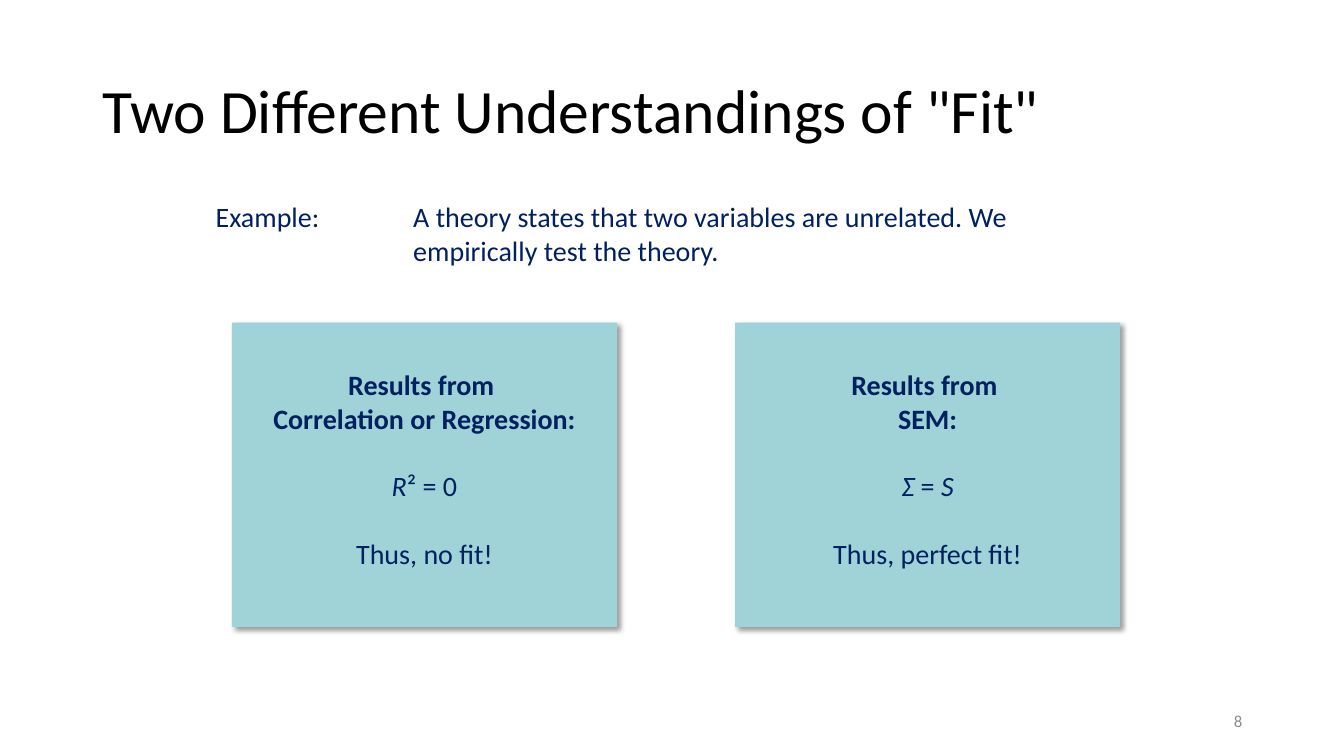
"""Build the slide contrasting two understandings of fit."""
from dataclasses import dataclass

from lxml import etree
from pptx import Presentation
from pptx.dml.color import RGBColor
from pptx.enum.shapes import MSO_SHAPE
from pptx.enum.text import MSO_ANCHOR, PP_ALIGN
from pptx.oxml.ns import qn
from pptx.util import Inches, Pt

RECTANGLE = MSO_SHAPE.RECTANGLE
TOP, MIDDLE = MSO_ANCHOR.TOP, MSO_ANCHOR.MIDDLE
LEFT, CENTER, RIGHT = PP_ALIGN.LEFT, PP_ALIGN.CENTER, PP_ALIGN.RIGHT


@dataclass(frozen=True)
class Theme:
    """Font, colours and type sizes of the slide."""
    font: str = "Calibri"
    title: str = "000000"
    body: str = "002060"
    card: str = "9FD3D7"
    number: str = "8C8C8C"
    shadow: str = "000000"
    title_size: int = 44
    body_size: int = 20
    number_size: int = 12


THEME = Theme()


def add_span(para, text, size=THEME.body_size, color=THEME.body, bold=False, italic=False):
    """Add one formatted run to a paragraph."""
    span = para.add_run()
    span.text = text
    span.font.name = THEME.font
    span.font.size = Pt(size)
    span.font.color.rgb = RGBColor.from_string(color)
    span.font.bold = bold
    span.font.italic = italic


def add_text(page, left, top, width, height, anchor=TOP, align=LEFT):
    """Add a wrapping text box and return its first paragraph."""
    box = page.shapes.add_textbox(Inches(left), Inches(top), Inches(width), Inches(height))
    box.text_frame.word_wrap = True
    box.text_frame.vertical_anchor = anchor
    para = box.text_frame.paragraphs[0]
    para.alignment = align
    return para


def set_hanging_indent(para, indent):
    """Hang the lines of a paragraph from a tab stop."""
    properties = para._p.get_or_add_pPr()
    properties.set("marL", str(Inches(indent)))
    properties.set("indent", str(-Inches(indent)))
    tabs = etree.SubElement(properties, qn("a:tabLst"))
    etree.SubElement(tabs, qn("a:tab"), pos=str(Inches(indent)), algn="l")


def add_shadow(shape):
    """Give a shape a soft shadow to the lower right."""
    shape.shadow.inherit = False
    effects = shape._element.spPr.find(qn("a:effectLst"))
    shadow = etree.SubElement(effects, qn("a:outerShdw"), blurRad=str(Pt(4)),
                              dist=str(Pt(3)), dir=str(45 * 60000), algn="tl", rotWithShape="0")
    color = etree.SubElement(shadow, qn("a:srgbClr"), val=THEME.shadow)
    etree.SubElement(color, qn("a:alpha"), val="40000")


def add_card(page, left, method, equation, verdict):
    """Add a result card with heading, equation and verdict."""
    card = page.shapes.add_shape(RECTANGLE, Inches(left), Inches(3.2), Inches(3.82), Inches(3.02))
    card.fill.solid()
    card.fill.fore_color.rgb = RGBColor.from_string(THEME.card)
    card.line.fill.background()
    add_shadow(card)
    frame = card.text_frame
    frame.word_wrap = True
    frame.vertical_anchor = TOP
    frame.margin_top = Inches(0.45)
    heading, formula, conclusion = frame.paragraphs[0], frame.add_paragraph(), frame.add_paragraph()
    for para in (heading, formula, conclusion):
        para.alignment = CENTER
    for para in (formula, conclusion):
        para.space_before = Pt(24)
    add_span(heading, "Results from ", bold=True)
    heading.add_line_break()
    add_span(heading, method, bold=True)
    for text, italic in equation:
        add_span(formula, text, italic=italic)
    add_span(conclusion, verdict)


def main():
    """Build and save the deck."""
    deck = Presentation()
    deck.slide_width, deck.slide_height = Inches(13.33), Inches(7.5)
    page = deck.slides.add_slide(deck.slide_layouts[6])

    title = add_text(page, 0.92, 0.4, 11.5, 1.45, MIDDLE)
    title.line_spacing = 0.9
    add_span(title, 'Two Different Understandings of "Fit"', THEME.title_size, THEME.title)

    example = add_text(page, 2.04, 1.93, 9.25, 0.81)
    set_hanging_indent(example, 1.96)
    add_span(example, "Example:\tA theory states that two variables are unrelated. "
                      "We empirically test the theory.")

    add_card(page, 2.3, "Correlation or Regression:",
             [("R", True), ("² = 0", False)], "Thus, no fit!")
    add_card(page, 7.29, "SEM:",
             [("Σ", True), (" = ", False), ("S", True)], "Thus, perfect fit!")

    number = add_text(page, 9.42, 6.95, 3, 0.4, MIDDLE, RIGHT)
    add_span(number, "8", THEME.number_size, THEME.number)
    deck.save("out.pptx")


if __name__ == "__main__":
    main()
